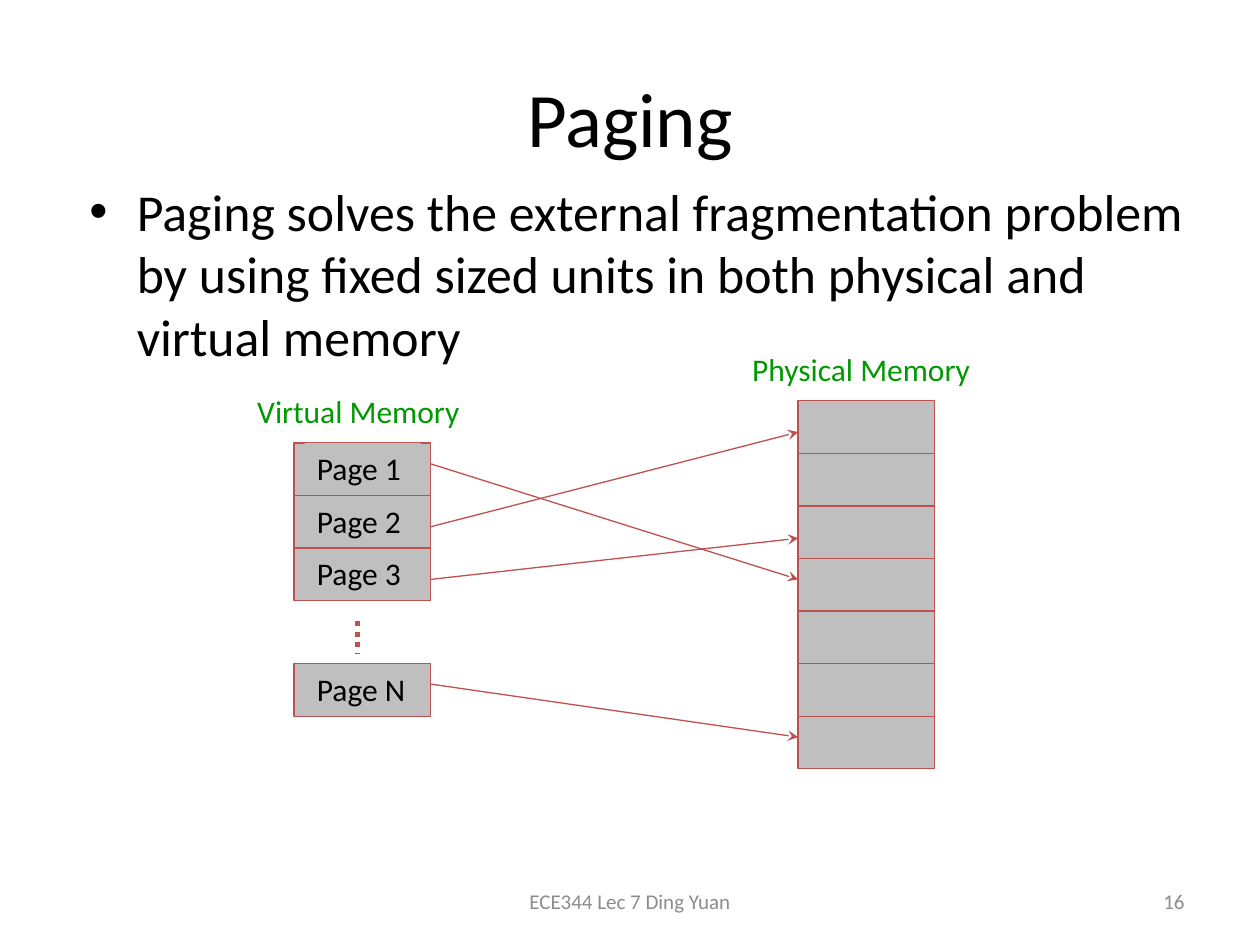
from lxml import etree
from pptx import Presentation
from pptx.dml.color import RGBColor
from pptx.enum.dml import MSO_LINE
from pptx.enum.shapes import MSO_CONNECTOR, MSO_SHAPE
from pptx.enum.text import MSO_ANCHOR, MSO_AUTO_SIZE, PP_ALIGN
from pptx.oxml.ns import qn
from pptx.util import Cm, Pt

BLACK = RGBColor(0x00, 0x00, 0x00)
WHITE = RGBColor(0xFF, 0xFF, 0xFF)
GRAY = RGBColor(0xBF, 0xBF, 0xBF)
DIM = RGBColor(0x8C, 0x8C, 0x8C)
GREEN = RGBColor(0x00, 0x99, 0x00)
RED = RGBColor(0xC0, 0x50, 0x4D)

LEFT, CENTER, RIGHT = PP_ALIGN.LEFT, PP_ALIGN.CENTER, PP_ALIGN.RIGHT
TOP, MIDDLE = MSO_ANCHOR.TOP, MSO_ANCHOR.MIDDLE
FIXED = MSO_AUTO_SIZE.NONE
RECT = MSO_SHAPE.RECTANGLE
STRAIGHT = MSO_CONNECTOR.STRAIGHT
DOTS = MSO_LINE.ROUND_DOT

CELL_W, CELL_H = 2.75, 1.06
VIRT_X, VIRT_Y = 5.93, 8.93
PHYS_X, PHYS_Y = 16.09, 8.08
LAST_Y = 13.38
FRAMES = 7
LINKS = [(9.35, 11.68), (10.62, 8.71), (11.68, 10.85), (13.79, 14.86)]


def write(shape, text, size, color, align, anchor):
    frame = shape.text_frame
    frame.word_wrap = True
    frame.auto_size = FIXED
    frame.vertical_anchor = anchor
    para = frame.paragraphs[0]
    para.alignment = align
    run = para.add_run()
    run.text = text
    run.font.name = "Calibri"
    run.font.size = Pt(size)
    run.font.color.rgb = color


def fill_holder(shape, box, text, size, align, anchor):
    shape.left, shape.top, shape.width, shape.height = map(Cm, box)
    write(shape, text, size, BLACK, align, anchor)


def add_label(slide, box, text, size, color, align=LEFT, anchor=TOP, fill=None):
    label = slide.shapes.add_textbox(*map(Cm, box))
    if fill is not None:
        label.fill.solid()
        label.fill.fore_color.rgb = fill
    write(label, text, size, color, align, anchor)


def add_cell(slide, x, y):
    cell = slide.shapes.add_shape(RECT, Cm(x), Cm(y), Cm(CELL_W), Cm(CELL_H))
    cell.shadow.inherit = False
    cell.fill.solid()
    cell.fill.fore_color.rgb = GRAY
    cell.line.color.rgb = RED
    cell.line.width = Pt(0.75)


def add_page(slide, y, name, fill=None):
    add_cell(slide, VIRT_X, y)
    add_label(slide, (VIRT_X + 0.21, y, 2.34, 0.94), name, 18, BLACK, fill=fill)


def add_line(slide, x1, y1, x2, y2, width):
    line = slide.shapes.add_connector(STRAIGHT, Cm(x1), Cm(y1), Cm(x2), Cm(y2))
    line.line.color.rgb = RED
    line.line.width = Pt(width)
    etree.SubElement(line._element.spPr, qn("a:effectLst"))
    return line


def add_arrow(slide, start, end):
    arrow = add_line(slide, VIRT_X + CELL_W, start, PHYS_X, end, 0.75)
    tail = etree.SubElement(arrow.line._get_or_add_ln(), qn("a:tailEnd"))
    tail.set("type", "stealth")


def main():
    deck = Presentation()
    deck.slide_width, deck.slide_height = Cm(25.4), Cm(19.05)
    slide = deck.slides.add_slide(deck.slide_layouts[1])

    fill_holder(slide.shapes.title, (1.27, 0.76, 22.86, 3.18),
                "Paging", 44, CENTER, MIDDLE)
    fill_holder(slide.placeholders[1], (1.55, 3.5, 22.68, 3.81),
                "Paging solves the external fragmentation problem by using "
                "fixed sized units in both physical and virtual memory",
                29.6, LEFT, TOP)
    add_label(slide, (8.68, 17.66, 8.04, 1.01), "ECE344 Lec 7 Ding Yuan",
              12, DIM, CENTER, MIDDLE)
    add_label(slide, (18.2, 17.66, 5.93, 1.01), "16", 12, DIM, RIGHT, MIDDLE)

    add_label(slide, (4.42, 7.77, 5.61, 1.02), "Virtual Memory",
              18, GREEN, CENTER, fill=WHITE)
    for i in range(3):
        add_page(slide, VIRT_Y + i * CELL_H, f"Page {i + 1}",
                 GRAY if i == 0 else None)
    add_page(slide, LAST_Y, "Page N")
    gap = add_line(slide, 7.2, 12.52, 7.2, 13.16, 3)
    gap.line.dash_style = DOTS

    add_label(slide, (14.4, 6.93, 5.92, 1.02), "Physical Memory",
              18, GREEN, CENTER, fill=WHITE)
    for i in range(FRAMES):
        add_cell(slide, PHYS_X, PHYS_Y + i * CELL_H)
    for start, end in LINKS:
        add_arrow(slide, start, end)

    deck.save("out.pptx")


if __name__ == "__main__":
    main()
